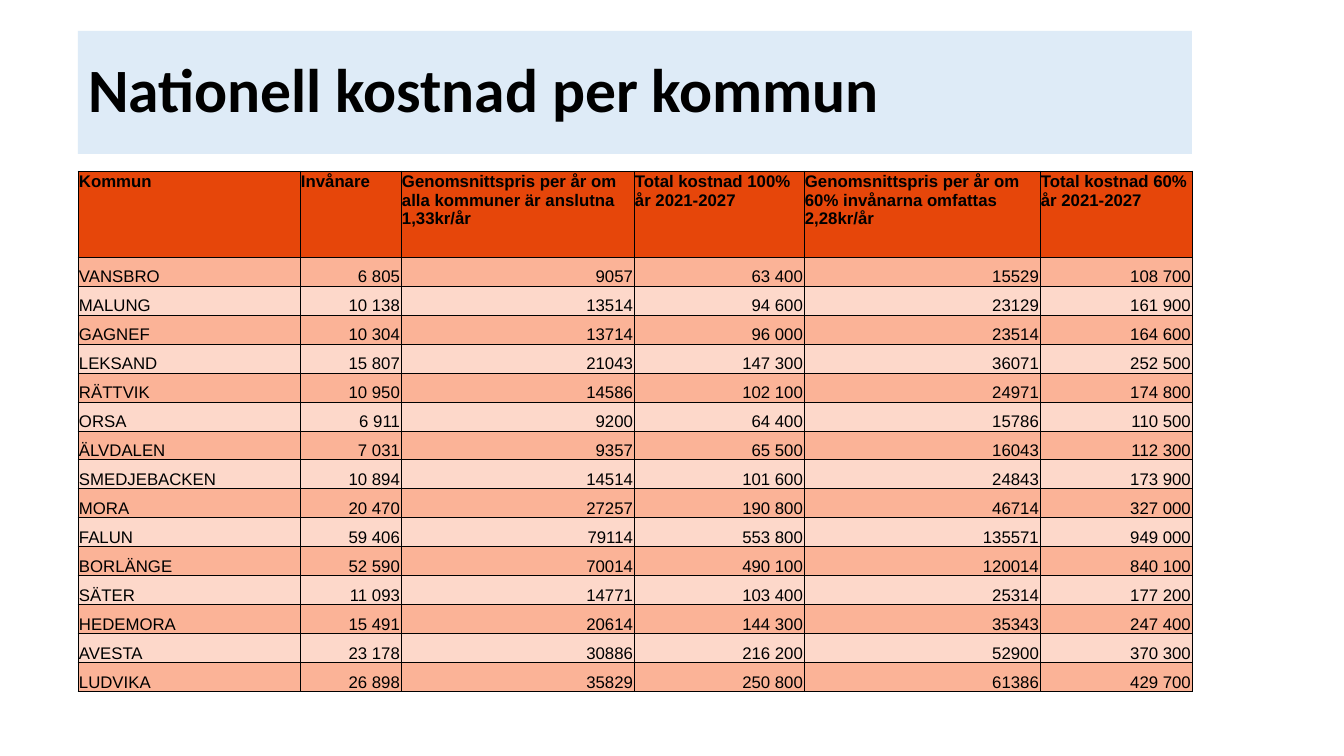
from dataclasses import astuple, dataclass

from lxml.etree import SubElement
from pptx import Presentation
from pptx.dml.color import RGBColor
from pptx.enum.text import MSO_ANCHOR, MSO_AUTO_SIZE, PP_ALIGN
from pptx.oxml.ns import qn
from pptx.util import Emu, Pt

SCALE = 914400 / 100.8  # EMU in one px
LEFT, WIDTHS = 78, (222, 101, 233, 170, 236, 152)
TOP, HEAD_H, ROW_H = 171, 86, 29
BLACK, PALE, HEAD = "000000", "DEEBF7", "E6460A"
BANDS = ("FBB397", "FDD8CA")


@dataclass
class Row:
    town: str
    people: str
    mean_all: str
    sum_all: str
    mean_part: str
    sum_part: str


HEADER = Row(
    "Kommun", "Invånare",
    "Genomsnittspris per år om alla kommuner är anslutna 1,33kr/år",
    "Total kostnad 100% år 2021-2027",
    "Genomsnittspris per år om 60% invånarna omfattas 2,28kr/år",
    "Total kostnad 60% år 2021-2027",
)
TOWNS = [
    Row("VANSBRO", "6 805", "9057", "63 400", "15529", "108 700"),
    Row("MALUNG", "10 138", "13514", "94 600", "23129", "161 900"),
    Row("GAGNEF", "10 304", "13714", "96 000", "23514", "164 600"),
    Row("LEKSAND", "15 807", "21043", "147 300", "36071", "252 500"),
    Row("RÄTTVIK", "10 950", "14586", "102 100", "24971", "174 800"),
    Row("ORSA", "6 911", "9200", "64 400", "15786", "110 500"),
    Row("ÄLVDALEN", "7 031", "9357", "65 500", "16043", "112 300"),
    Row("SMEDJEBACKEN", "10 894", "14514", "101 600", "24843", "173 900"),
    Row("MORA", "20 470", "27257", "190 800", "46714", "327 000"),
    Row("FALUN", "59 406", "79114", "553 800", "135571", "949 000"),
    Row("BORLÄNGE", "52 590", "70014", "490 100", "120014", "840 100"),
    Row("SÄTER", "11 093", "14771", "103 400", "25314", "177 200"),
    Row("HEDEMORA", "15 491", "20614", "144 300", "35343", "247 400"),
    Row("AVESTA", "23 178", "30886", "216 200", "52900", "370 300"),
    Row("LUDVIKA", "26 898", "35829", "250 800", "61386", "429 700"),
]


def px(count: int) -> Emu:
    return Emu(round(count * SCALE))


def paint(color, code: str) -> None:
    color.rgb = RGBColor.from_string(code)


def format_all(item, values: dict) -> None:
    for name, value in values.items():
        setattr(item, name, value)


def write(para, text: str, font: dict, align: PP_ALIGN) -> None:
    run = para.add_run()
    run.text = text
    format_all(run.font, font)
    paint(run.font.color, BLACK)
    para.alignment = align


def fill(item, code: str) -> None:
    item.fill.solid()
    paint(item.fill.fore_color, code)


def border(cell) -> None:
    props = cell._tc.get_or_add_tcPr()
    for side in ("lnL", "lnR", "lnT", "lnB"):
        line = SubElement(props, qn(f"a:{side}"), w=str(Pt(0.5)))
        solid = SubElement(line, qn("a:solidFill"))
        SubElement(solid, qn("a:srgbClr"), val=BLACK)


def draw_title(slide) -> None:
    title = slide.shapes.title
    format_all(title, {"left": px(LEFT), "top": px(31),
                       "width": px(sum(WIDTHS)), "height": px(123)})
    fill(title, PALE)
    frame = title.text_frame
    format_all(frame, {"word_wrap": True, "auto_size": MSO_AUTO_SIZE.NONE,
                       "vertical_anchor": MSO_ANCHOR.MIDDLE})
    para = frame.paragraphs[0]
    para.line_spacing = 0.9
    write(para, "Nationell kostnad per kommun",
          {"name": "Calibri", "size": Pt(44), "bold": True}, PP_ALIGN.LEFT)


def draw_cell(cell, text: str, row: int, col: int) -> None:
    head = row == 0
    border(cell)
    fill(cell, HEAD if head else BANDS[(row - 1) % 2])
    format_all(cell, {
        "margin_left": px(1), "margin_right": px(1),
        "margin_top": px(1), "margin_bottom": 0,
        "vertical_anchor": MSO_ANCHOR.TOP if head else MSO_ANCHOR.BOTTOM,
    })
    write(cell.text_frame.paragraphs[0], text,
          {"name": "Arial", "size": Pt(12), "bold": head},
          PP_ALIGN.LEFT if head or col == 0 else PP_ALIGN.RIGHT)


def draw_table(slide, rows: list[Row]) -> None:
    high = HEAD_H + ROW_H * (len(rows) - 1)
    table = slide.shapes.add_table(
        len(rows), len(WIDTHS), px(LEFT), px(TOP), px(sum(WIDTHS)), px(high)
    ).table
    table.horz_banding = False
    for col, width in zip(table.columns, WIDTHS):
        col.width = px(width)
    for r, row in enumerate(rows):
        table.rows[r].height = px(ROW_H if r else HEAD_H)
        for c, text in enumerate(astuple(row)):
            draw_cell(table.cell(r, c), text, r, c)


def main() -> None:
    deck = Presentation()
    format_all(deck, {"slide_width": px(1344), "slide_height": px(756)})
    # Title-only layout
    slide = deck.slides.add_slide(deck.slide_layouts[5])
    draw_title(slide)
    # Cost table
    draw_table(slide, [HEADER, *TOWNS])
    deck.save("out.pptx")


if __name__ == "__main__":
    main()
